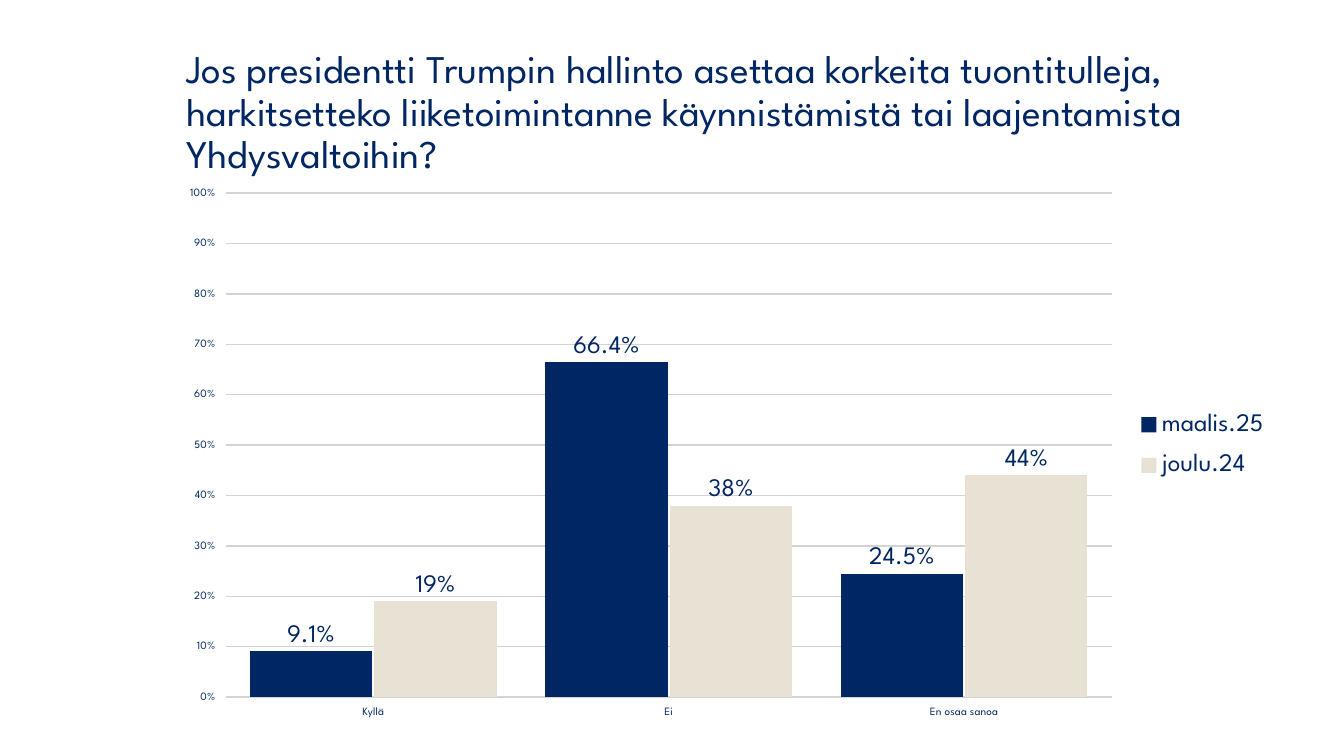
from lxml import etree
from pptx import Presentation
from pptx.chart.data import CategoryChartData
from pptx.dml.color import RGBColor
from pptx.enum.chart import XL_CHART_TYPE, XL_LABEL_POSITION, XL_LEGEND_POSITION, XL_TICK_MARK
from pptx.enum.text import MSO_ANCHOR
from pptx.oxml.ns import qn
from pptx.util import Inches, Pt

COLUMNS = XL_CHART_TYPE.COLUMN_CLUSTERED
OUTSIDE_END = XL_LABEL_POSITION.OUTSIDE_END
LEGEND_RIGHT = XL_LEGEND_POSITION.RIGHT
TICK_OUTSIDE = XL_TICK_MARK.OUTSIDE
NO_TICK = XL_TICK_MARK.NONE
MIDDLE = MSO_ANCHOR.MIDDLE

FONT = "League Spartan"
NAVY, SAND, GRID = "002663", "E8E2D5", "D3D3D3"
TITLE = (
    "Jos presidentti Trumpin hallinto asettaa korkeita tuontitulleja, "
    "harkitsetteko liiketoimintanne käynnistämistä tai laajentamista "
    "Yhdysvaltoihin?"
)
TITLE_BOX = (1.75, 0.4, 10.59, 1.45)
CHART_BOX = (1.75, 1.85, 11.06, 5.46)
PLOT_AREA = {"x": 0.044, "y": 0.012, "w": 0.795, "h": 0.916}
LEGEND_AREA = {"x": 0.86, "y": 0.38, "w": 0.12, "h": 0.18}
ANSWERS = ["Kyllä", "Ei", "En osaa sanoa"]
SURVEYS = [
    ("maalis.25", [0.091, 0.664, 0.245], NAVY, "0.0%"),
    ("joulu.24", [0.19, 0.38, 0.44], SAND, "0%"),
]


def color(value):
    return RGBColor.from_string(value)


def set_font(font, size):
    font.name = FONT
    font.size = Pt(size)
    font.bold = False
    font.color.rgb = color(NAVY)


def place(element, position, fractions, target=()):
    layout = element.find(qn("c:layout"))
    if layout is None:
        layout = etree.Element(qn("c:layout"))
        element.insert(position, layout)
    manual = etree.SubElement(layout, qn("c:manualLayout"))
    settings = [*target, ("xMode", "edge"), ("yMode", "edge"), *fractions.items()]
    for tag, value in settings:
        etree.SubElement(manual, qn(f"c:{tag}")).set("val", str(value))


def add_title(slide):
    frame = slide.shapes.add_textbox(*map(Inches, TITLE_BOX)).text_frame
    frame.word_wrap = True
    frame.vertical_anchor = MIDDLE
    paragraph = frame.paragraphs[0]
    paragraph.text = TITLE
    paragraph.line_spacing = 0.9
    set_font(paragraph.font, 28)


def add_survey_chart(slide):
    data = CategoryChartData()
    data.categories = ANSWERS
    for name, values, _, number_format in SURVEYS:
        data.add_series(name, values, number_format)
    chart = slide.shapes.add_chart(COLUMNS, *map(Inches, CHART_BOX), data).chart
    set_font(chart.font, 18)
    chart.has_title = False
    chart.has_legend = True
    legend = chart.legend
    legend.position = LEGEND_RIGHT
    legend.include_in_layout = False
    set_font(legend.font, 18)
    place(legend._element, 1, LEGEND_AREA)

    for axis in (chart.category_axis, chart.value_axis):
        axis.major_tick_mark = TICK_OUTSIDE
        axis.minor_tick_mark = NO_TICK
        axis.format.line.fill.background()
        set_font(axis.tick_labels.font, 8)
    percent_axis = chart.value_axis
    percent_axis.minimum_scale = 0
    percent_axis.maximum_scale = 1
    percent_axis.major_unit = 0.1
    percent_axis.tick_labels.number_format = "0%"
    percent_axis.tick_labels.number_format_is_linked = False
    percent_axis.has_major_gridlines = True
    gridline = percent_axis.major_gridlines.format.line
    gridline.color.rgb = color(GRID)
    gridline.width = Pt(1)

    plot = chart.plots[0]
    plot.vary_by_categories = False
    plot.gap_width = 40
    plot.overlap = -2
    for series, (_, _, fill, number_format) in zip(plot.series, SURVEYS):
        series.format.fill.solid()
        series.format.fill.fore_color.rgb = color(fill)
        labels = series.data_labels
        labels.show_value = True
        labels.position = OUTSIDE_END
        labels.number_format = number_format
        labels.number_format_is_linked = False
        set_font(labels.font, 18)
    place(plot._element.getparent(), 0, PLOT_AREA, [("layoutTarget", "inner")])


def main():
    presentation = Presentation()
    presentation.slide_width = Inches(13.33)
    presentation.slide_height = Inches(7.5)
    slide = presentation.slides.add_slide(presentation.slide_layouts[6])
    add_title(slide)
    add_survey_chart(slide)
    presentation.save("out.pptx")


if __name__ == "__main__":
    main()
